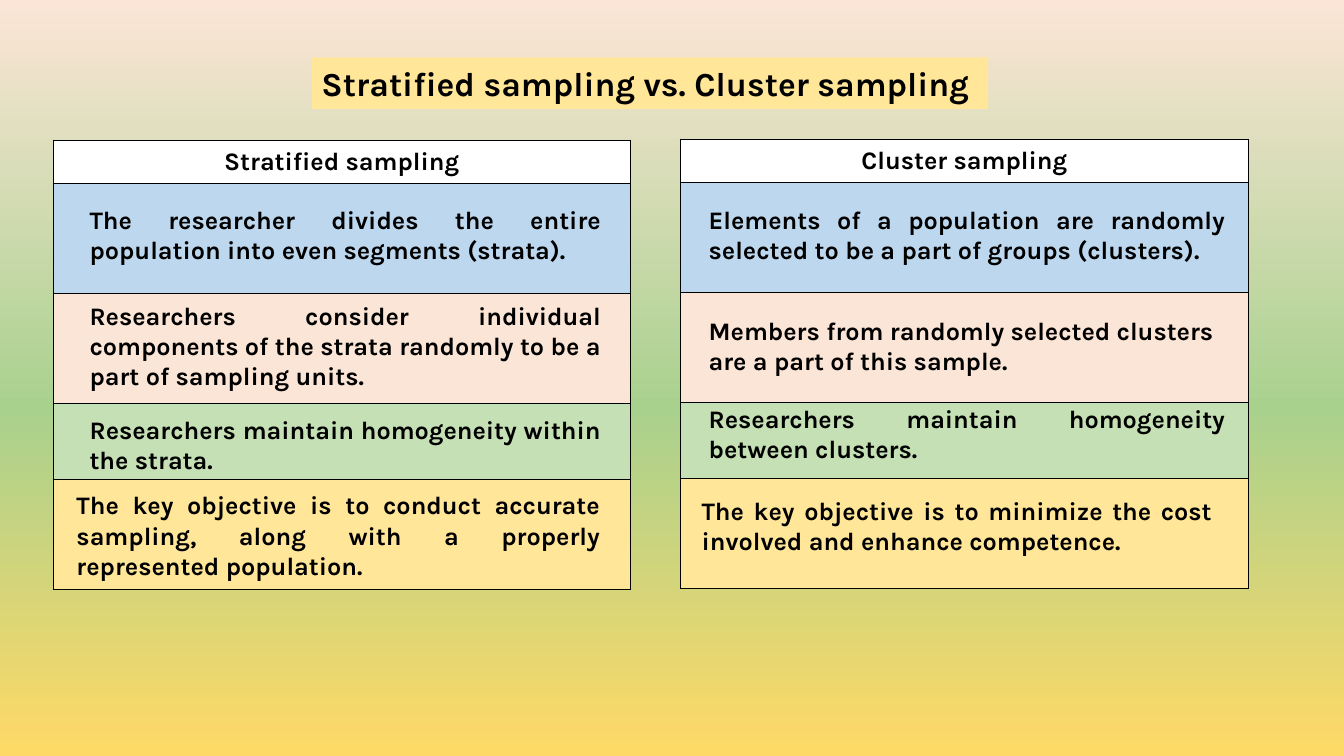
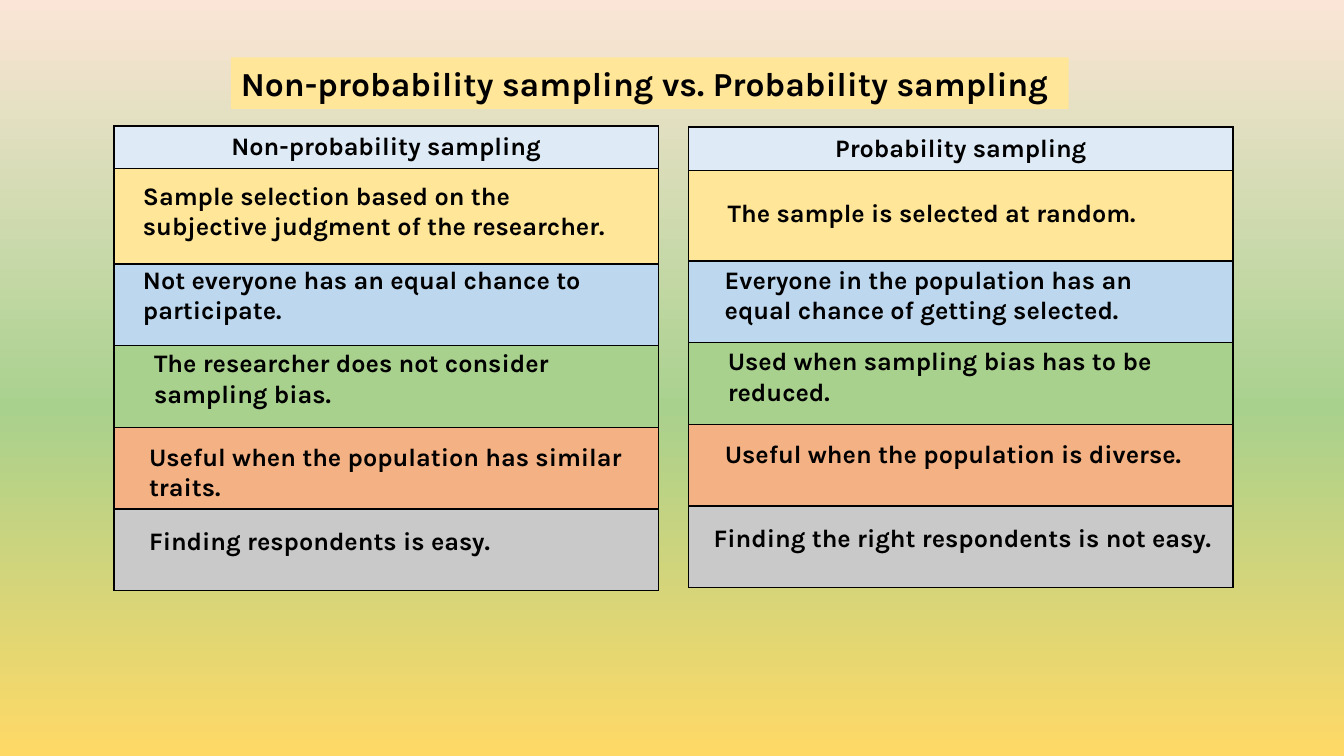
from dataclasses import dataclass

from lxml.etree import SubElement
from pptx import Presentation
from pptx.dml.color import RGBColor
from pptx.enum.shapes import MSO_SHAPE
from pptx.enum.text import MSO_ANCHOR, MSO_AUTO_SIZE, PP_ALIGN
from pptx.oxml.ns import qn
from pptx.util import Inches, Pt


@dataclass(frozen=True)
class Theme:
    font: str = "Karla"
    title_size: int = 24
    body_size: int = 18
    border_width: int = 1
    ink: str = "000000"
    white: str = "FFFFFF"
    ice: str = "DEEBF7"
    blue: str = "BDD7EE"
    peach: str = "FBE5D6"
    mint: str = "C5E0B4"
    green: str = "A9D18E"
    yellow: str = "FFE699"
    gold: str = "FFD966"
    orange: str = "F4B183"
    gray: str = "C9C9C9"


THEME = Theme()
BACKDROP = [(0, THEME.peach), (54, THEME.green), (100, THEME.gold)]
LEFT, CENTER, JUSTIFY = PP_ALIGN.LEFT, PP_ALIGN.CENTER, PP_ALIGN.JUSTIFY
LINE_COUNT_HEIGHTS = {1: 0.4, 2: 0.71, 3: 1.01}


@dataclass(frozen=True)
class Point:
    text: str
    x: float
    y: float
    width: float
    indent: float = 0
    lines: int = 2
    align: PP_ALIGN = LEFT


@dataclass(frozen=True)
class Column:
    heading: str
    x: float
    y: float
    width: float
    heights: list
    points: list


STRATIFIED_COLORS = [THEME.white, THEME.blue, THEME.peach, THEME.mint, THEME.yellow]
STRATIFIED_HEIGHTS = [0.43, 1.09, 1.09, 0.76, 1.09]
STRATIFIED_COLUMNS = [
    Column("Stratified sampling", 0.53, 1.39, 5.72, STRATIFIED_HEIGHTS, [
        Point("The researcher divides the entire population into even segments (strata).",
              0.66, 1.98, 5.4, indent=0.13, align=JUSTIFY),
        Point("Researchers consider individual components of the strata randomly "
              "to be a part of sampling units.",
              0.66, 2.93, 5.4, indent=0.13, lines=3, align=JUSTIFY),
        Point("Researchers maintain homogeneity within the strata.",
              0.6, 4.06, 5.46, indent=0.19, align=JUSTIFY),
        Point("The key objective is to conduct accurate sampling, along with "
              "a properly represented population.",
              0.47, 4.81, 5.58, indent=0.19, lines=3, align=JUSTIFY),
    ]),
    Column("Cluster sampling", 6.75, 1.38, 5.63, STRATIFIED_HEIGHTS, [
        Point("Elements of a population are randomly selected to be a part "
              "of groups (clusters).", 6.87, 1.98, 5.38, indent=0.06, align=JUSTIFY),
        Point("Members from randomly selected clusters are a part of this sample.",
              6.87, 3.08, 5.38, indent=0.06),
        Point("Researchers maintain homogeneity between clusters.",
              6.87, 3.95, 5.38, indent=0.06, align=JUSTIFY),
        Point("The key objective is to minimize the cost involved and enhance competence.",
              6.67, 4.86, 5.45, indent=0.19, align=JUSTIFY),
    ]),
]

PROBABILITY_COLORS = [THEME.ice, THEME.yellow, THEME.blue, THEME.green,
                      THEME.orange, THEME.gray]
PROBABILITY_COLUMNS = [
    Column("Non-probability sampling", 1.13, 1.25, 5.4, [0.42, 0.95] + [0.81] * 4, [
        Point("Sample selection based on the subjective judgment of the researcher.",
              1.32, 1.74, 4.87),
        Point("Not everyone has an equal chance to participate.", 1.32, 2.57, 5.04),
        Point("The researcher does not consider sampling bias.", 1.43, 3.4, 4.93),
        Point("Useful when the population has similar traits.",
              1.32, 4.33, 5.25, indent=0.06),
        Point("Finding respondents is easy.", 1.32, 5.16, 4.7, indent=0.06, lines=1),
    ]),
    Column("Probability sampling", 6.83, 1.26, 5.4, [0.43, 0.9] + [0.81] * 4, [
        Point("The sample is selected at random.", 7.06, 1.91, 4.56, indent=0.06, lines=1),
        Point("Everyone in the population has an equal chance of getting selected.",
              7.03, 2.57, 5, indent=0.06),
        Point("Used when sampling bias has to be reduced.", 7.06, 3.38, 5.18, indent=0.06),
        Point("Useful when the population is diverse.",
              7.03, 4.3, 4.85, indent=0.06, lines=1),
        Point("Finding the right respondents is not easy.", 6.98, 5.13, 5.31, lines=1),
    ]),
]


def write_text(frame, text, size=THEME.body_size, align=LEFT, indent=0,
               color=THEME.ink, bold=True):
    frame.word_wrap = True
    paragraph = frame.paragraphs[0]
    paragraph.alignment = align
    if indent:
        paragraph._p.get_or_add_pPr().set("marL", str(Inches(indent)))
    run = paragraph.add_run()
    run.text = text
    run.font.name = THEME.font
    run.font.size = Pt(size)
    run.font.bold = bold
    run.font.color.rgb = RGBColor.from_string(color)


def paint_backdrop(slide):
    fill = slide.background.fill
    fill.gradient()
    fill.gradient_angle = 270
    stops = next(slide.element.iter(qn("a:gsLst")))
    for stop in list(stops):
        stops.remove(stop)
    for percent, color in BACKDROP:
        stop = SubElement(stops, qn("a:gs"), pos=str(percent * 1000))
        SubElement(stop, qn("a:srgbClr"), val=color)


def add_title(slide, text, x, width):
    band = slide.shapes.add_shape(
        MSO_SHAPE.RECTANGLE, Inches(x), Inches(0.57), Inches(width), Inches(0.51))
    band.shadow.inherit = False
    band.fill.solid()
    band.fill.fore_color.rgb = RGBColor.from_string(THEME.yellow)
    band.line.fill.background()
    write_text(band.text_frame, text, size=THEME.title_size)


def style_cell(cell, color):
    cell.vertical_anchor = MSO_ANCHOR.MIDDLE
    cell.margin_left = cell.margin_right = Inches(0.08)
    cell.margin_top = cell.margin_bottom = Inches(0.04)
    properties = cell._tc.get_or_add_tcPr()
    for side in ("L", "R", "T", "B"):
        border = SubElement(properties, qn(f"a:ln{side}"), w=str(Pt(THEME.border_width)))
        solid = SubElement(border, qn("a:solidFill"))
        SubElement(solid, qn("a:srgbClr"), val=THEME.ink)
    cell.fill.solid()
    cell.fill.fore_color.rgb = RGBColor.from_string(color)


def add_grid(slide, column, colors):
    table = slide.shapes.add_table(
        len(colors), 1, Inches(column.x), Inches(column.y),
        Inches(column.width), Inches(sum(column.heights))).table
    table.first_row = False
    table.horz_banding = False
    for index, (height, color) in enumerate(zip(column.heights, colors)):
        table.rows[index].height = Inches(height)
        style_cell(table.cell(index, 0), color)
    write_text(table.cell(0, 0).text_frame, column.heading, align=CENTER)


def add_point(slide, point):
    statement = slide.shapes.add_textbox(
        Inches(point.x), Inches(point.y), Inches(point.width),
        Inches(LINE_COUNT_HEIGHTS[point.lines]))
    write_text(statement.text_frame, point.text, align=point.align, indent=point.indent)
    statement.text_frame.auto_size = MSO_AUTO_SIZE.SHAPE_TO_FIT_TEXT


def add_comparison(deck, title, title_x, title_width, columns, colors):
    slide = deck.slides.add_slide(deck.slide_layouts[6])
    paint_backdrop(slide)
    add_title(slide, title, title_x, title_width)
    for column in columns:
        add_grid(slide, column, colors)
        for point in column.points:
            add_point(slide, point)


def main():
    deck = Presentation()
    deck.slide_width = Inches(13.33)
    deck.slide_height = Inches(7.5)
    add_comparison(deck, "Stratified sampling vs. Cluster sampling", 3.09, 6.71,
                   STRATIFIED_COLUMNS, STRATIFIED_COLORS)
    add_comparison(deck, "Non-probability sampling vs. Probability sampling", 2.29, 8.31,
                   PROBABILITY_COLUMNS, PROBABILITY_COLORS)
    deck.save("out.pptx")


if __name__ == "__main__":
    main()
